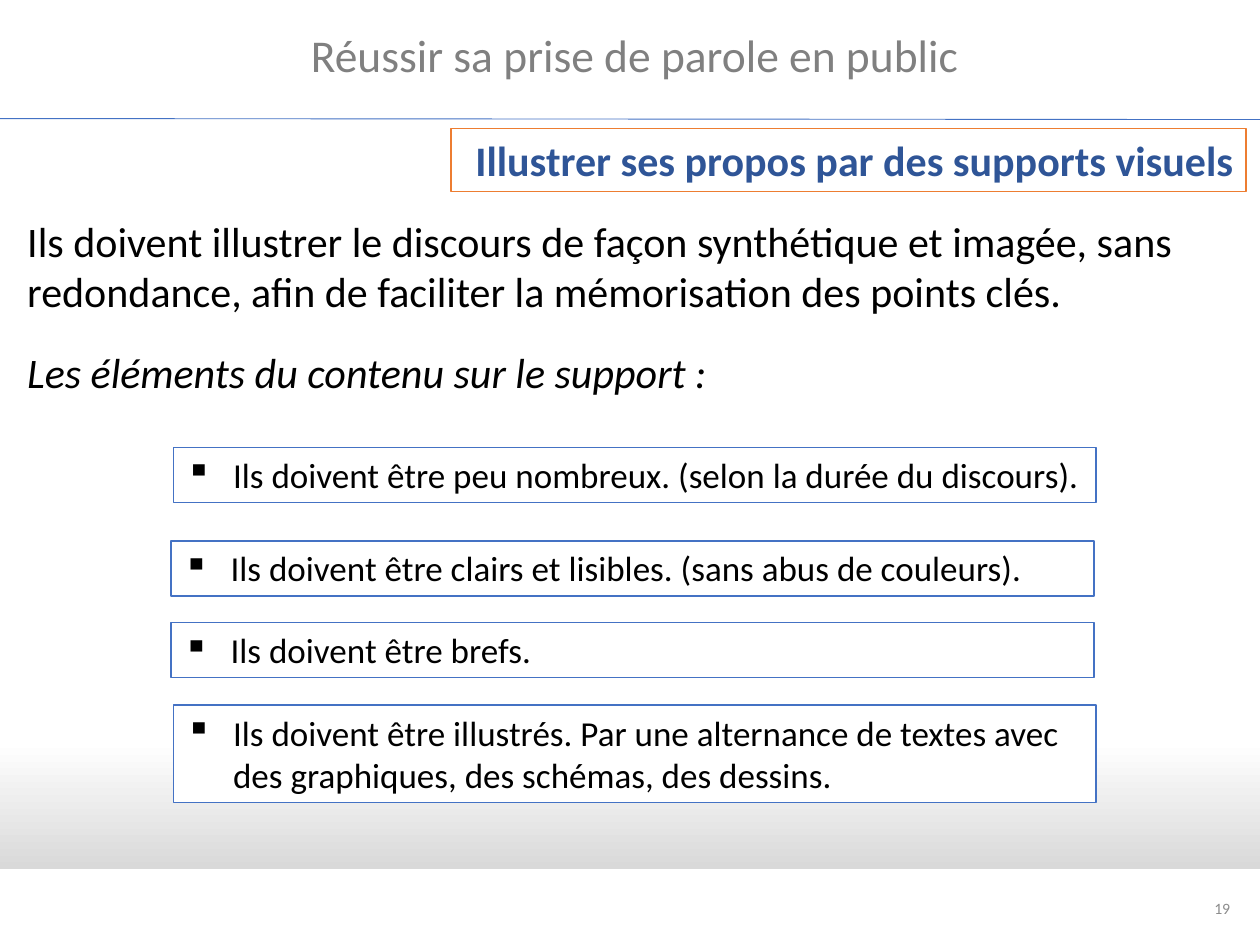
from lxml import etree
from pptx import Presentation
from pptx.dml.color import RGBColor
from pptx.enum.shapes import MSO_CONNECTOR, MSO_SHAPE
from pptx.enum.text import MSO_ANCHOR, PP_ALIGN
from pptx.oxml.ns import qn
from pptx.util import Cm, Pt

RECTANGLE = MSO_SHAPE.RECTANGLE
STRAIGHT = MSO_CONNECTOR.STRAIGHT
TOP, MIDDLE = MSO_ANCHOR.TOP, MSO_ANCHOR.MIDDLE
LEFT, CENTER, RIGHT = PP_ALIGN.LEFT, PP_ALIGN.CENTER, PP_ALIGN.RIGHT

BLACK, WHITE, GREY = "000000", "FFFFFF", "808080"
BLUE, DARK_BLUE, ORANGE = "4472C4", "2F5597", "ED7D31"

POINT_WIDTH = 18.6
POINTS = [  # left, top, height, text
    (3.5, 9.02, 1.11, "Ils doivent être peu nombreux. (selon la durée du discours)."),
    (3.45, 10.9, 1.11, "Ils doivent être clairs et lisibles. (sans abus de couleurs)."),
    (3.45, 12.55, 1.11, "Ils doivent être brefs."),
    (3.5, 14.22, 1.96, "Ils doivent être illustrés. Par une alternance de textes avec "
                       "des graphiques, des schémas, des dessins."),
]


def color(hex_value):
    return RGBColor.from_string(hex_value)


class SlideBuilder:
    """Draws elements on one slide; all lengths are in centimetres."""

    font_name = "Calibri"
    bullet_indent = Cm(0.95)

    def __init__(self, slide):
        self.slide = slide

    def gradient_band(self, left, top, width, height, start, end, start_position):
        band = self.slide.shapes.add_shape(
            RECTANGLE, Cm(left), Cm(top), Cm(width), Cm(height))
        band.shadow.inherit = False
        band.line.fill.background()
        band.fill.gradient()
        band.fill.gradient_angle = 270
        first, last = band.fill.gradient_stops
        first.color.rgb, first.position = color(start), start_position
        last.color.rgb, last.position = color(end), 1

    def rule(self, x1, y1, x2, y2, line_color):
        line = self.slide.shapes.add_connector(
            STRAIGHT, Cm(x1), Cm(y1), Cm(x2), Cm(y2))
        line.line.color.rgb = color(line_color)
        line.line.width = Pt(0.5)
        etree.SubElement(line._element.spPr, qn("a:effectLst"))

    def text(self, left, top, width, height, content, size, **style):
        box = self.slide.shapes.add_textbox(Cm(left), Cm(top), Cm(width), Cm(height))
        return self.fill_text(box, content, size, **style)

    def framed_text(self, left, top, width, height, content, size, border, **style):
        shape = self.slide.shapes.add_shape(
            RECTANGLE, Cm(left), Cm(top), Cm(width), Cm(height))
        shape.shadow.inherit = False
        shape.fill.solid()
        shape.fill.fore_color.rgb = color(WHITE)
        shape.line.color.rgb = color(border)
        shape.line.width = Pt(1)
        return self.fill_text(shape, content, size, **style)

    def fill_text(self, shape, content, size, text_color=BLACK, align=LEFT,
                  anchor=TOP, bold=False, bullet=None):
        """Fill the shape with one paragraph per line and return the paragraphs."""
        frame = shape.text_frame
        frame.word_wrap = True
        frame.vertical_anchor = anchor
        frame.text = content
        for paragraph in frame.paragraphs:
            paragraph.alignment = align
            if bullet:
                self.add_bullet(paragraph, bullet)
            paragraph.font.name = self.font_name
            paragraph.font.size = Pt(size)
            paragraph.font.bold = bold
            paragraph.font.color.rgb = color(text_color)
        return frame.paragraphs

    def add_bullet(self, paragraph, character):
        properties = paragraph._p.get_or_add_pPr()
        properties.set("marL", str(self.bullet_indent))
        properties.set("indent", str(-self.bullet_indent))
        etree.SubElement(properties, qn("a:buChar"), char=character)


def main():
    presentation = Presentation()
    presentation.slide_width, presentation.slide_height = Cm(25.4), Cm(19.05)
    slide = presentation.slides.add_slide(presentation.slide_layouts[6])
    builder = SlideBuilder(slide)

    builder.gradient_band(0, 10.92, 25.4, 6.6, WHITE, "D9D9D9", 0.61)
    builder.text(0.2, 0.43, 25.2, 1.37, "Réussir sa prise de parole en public", 26,
                 text_color=GREY, align=CENTER)
    builder.rule(0, 2.39, 25.4, 2.41, BLUE)
    builder.text(19.13, 17.8, 5.92, 1.02, "19", 9,
                 text_color="8C8C8C", align=RIGHT, anchor=MIDDLE)

    introduction = (
        "Ils doivent illustrer le discours de façon synthétique et imagée, sans "
        "redondance, afin de faciliter la mémorisation des points clés.\n"
        "Les éléments du contenu sur le support :")
    lead_in = builder.text(0.3, 4.22, 24.9, 5.13, introduction, 24)[-1]
    lead_in.space_before = Pt(17)
    lead_in.font.italic = True

    builder.framed_text(9.09, 2.59, 16.03, 1.27,
                        "Illustrer ses propos par des supports visuels", 24, ORANGE,
                        text_color=DARK_BLUE, align=RIGHT, bold=True)
    for left, top, height, content in POINTS:
        builder.framed_text(left, top, POINT_WIDTH, height, content, 20, BLUE, bullet="▪")

    presentation.save("out.pptx")


if __name__ == "__main__":
    main()
